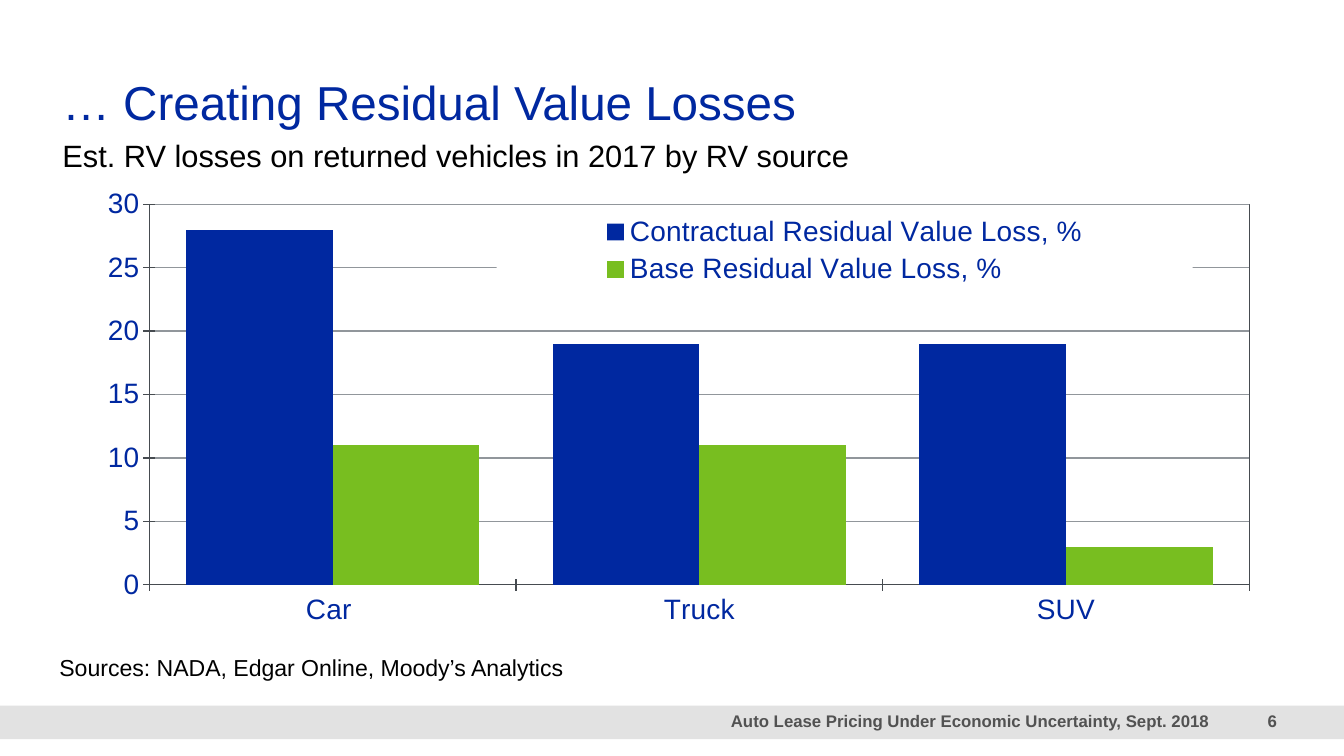
from lxml.etree import SubElement
from pptx import Presentation
from pptx.chart.data import CategoryChartData
from pptx.dml.color import RGBColor
from pptx.enum.chart import XL_CHART_TYPE, XL_LEGEND_POSITION, XL_TICK_LABEL_POSITION, XL_TICK_MARK
from pptx.enum.shapes import MSO_SHAPE
from pptx.enum.text import MSO_ANCHOR, PP_ALIGN
from pptx.oxml import parse_xml
from pptx.oxml.ns import nsdecls, qn
from pptx.util import Inches, Pt

COLORS = {
    "blue": "0028A0",
    "green": "78BE20",
    "axis": "464B50",
    "grid": "91969B",
    "band": "E2E2E2",
    "footer": "525252",
    "black": "000000",
    "white": "FFFFFF",
}
LOSSES = {
    "Contractual Residual Value Loss, %": ("blue", (28, 19, 19)),
    "Base Residual Value Loss, %": ("green", (11, 11, 3)),
}
BAND_TOP, BAND_HEIGHT = 93.33, 4.44


class SlideBuilder:
    font_name = "Arial"
    columns = rows = 100

    def __init__(self, deck):
        self.deck = deck
        self.page = deck.slides.add_slide(deck.slide_layouts[6])

    def area(self, left, top, width, height):
        column = self.deck.slide_width / self.columns
        row = self.deck.slide_height / self.rows
        return [round(n) for n in (left * column, top * row, width * column, height * row)]

    def color(self, name):
        return RGBColor.from_string(COLORS[name])

    def style(self, font, size, color, bold=False):
        font.name = self.font_name
        font.size = Pt(size)
        font.bold = bold
        font.color.rgb = self.color(color)

    def band(self, *area, color):
        shape = self.page.shapes.add_shape(MSO_SHAPE.RECTANGLE, *self.area(*area))
        shape.shadow.inherit = False
        shape.fill.solid()
        shape.fill.fore_color.rgb = self.color(color)
        shape.line.fill.background()

    def text(self, words, *area, size, color="black", bold=False,
             align=PP_ALIGN.LEFT, anchor=MSO_ANCHOR.TOP, spacing=1.0):
        frame = self.page.shapes.add_textbox(*self.area(*area)).text_frame
        frame.word_wrap = True
        frame.vertical_anchor = anchor
        frame.margin_left = frame.margin_right = frame.margin_top = frame.margin_bottom = 0
        frame.text = words
        para = frame.paragraphs[0]
        para.alignment = align
        para.line_spacing = spacing
        for span in para.runs:
            self.style(span.font, size, color, bold)

    def footer(self, words, left, width):
        self.text(words, left, BAND_TOP, width, BAND_HEIGHT, size=12, color="footer",
                  bold=True, align=PP_ALIGN.RIGHT, anchor=MSO_ANCHOR.MIDDLE, spacing=0.9)

    def line(self, line_format, color):
        line_format.width = Pt(1)
        line_format.color.rgb = self.color(color)

    def layout(self, parent, position, left, top, width, height, inner=False):
        for old in parent.findall(qn("c:layout")):
            parent.remove(old)
        layout = parse_xml(f"<c:layout {nsdecls('c')}/>")
        manual = SubElement(layout, qn("c:manualLayout"))
        settings = [("layoutTarget", "inner")] if inner else []
        settings += [("xMode", "edge"), ("yMode", "edge"),
                     ("x", left), ("y", top), ("w", width), ("h", height)]
        for tag, value in settings:
            SubElement(manual, qn(f"c:{tag}")).set("val", str(value))
        parent.insert(position, layout)

    def axis(self, axis):
        axis.major_tick_mark = XL_TICK_MARK.CROSS
        axis.minor_tick_mark = XL_TICK_MARK.NONE
        self.style(axis.tick_labels.font, 20, "blue")
        self.line(axis.format.line, "axis")

    def column_chart(self, categories, losses, *area):
        data = CategoryChartData()
        data.categories = categories
        for name, (_, values) in losses.items():
            data.add_series(name, values)
        chart = self.page.shapes.add_chart(
            XL_CHART_TYPE.COLUMN_CLUSTERED, *self.area(*area), data).chart
        chart.has_title = False
        self.style(chart.font, 19.2, "blue", True)

        plot = chart.plots[0]
        plot.vary_by_categories = False
        plot.gap_width = 50
        plot.overlap = 0
        for series, (color, _) in zip(plot.series, losses.values()):
            series.format.fill.solid()
            series.format.fill.fore_color.rgb = self.color(color)

        self.axis(chart.category_axis)
        self.axis(chart.value_axis)
        chart.category_axis.tick_label_position = XL_TICK_LABEL_POSITION.LOW
        chart.value_axis.minimum_scale = 0
        chart.value_axis.maximum_scale = 30
        chart.value_axis.major_unit = 5
        self.line(chart.value_axis.major_gridlines.format.line, "grid")

        plot_area = chart.element.find(".//" + qn("c:plotArea"))
        self.layout(plot_area, 0, 0.082, 0.088, 0.893, 0.775, inner=True)
        plot_area.append(parse_xml(
            f"<c:spPr {nsdecls('c', 'a')}><a:noFill/><a:ln w='12700'><a:solidFill>"
            f"<a:srgbClr val='{COLORS['axis']}'/></a:solidFill></a:ln></c:spPr>"))
        self.legend(chart)

    def legend(self, chart):
        chart.has_legend = True
        legend = chart.legend
        legend.position = XL_LEGEND_POSITION.RIGHT
        legend.include_in_layout = False
        self.style(legend.font, 20, "blue")
        element = chart.element.find(".//" + qn("c:legend"))
        self.layout(element, 1, 0.364, 0.1, 0.565, 0.165)
        element.find(qn("c:overlay")).addnext(parse_xml(
            f"<c:spPr {nsdecls('c', 'a')}><a:solidFill><a:srgbClr val='{COLORS['white']}'/>"
            "</a:solidFill><a:ln><a:noFill/></a:ln></c:spPr>"))


def main():
    deck = Presentation()
    deck.slide_width = Inches(13.33)
    deck.slide_height = Inches(7.5)
    slide = SlideBuilder(deck)
    slide.band(0, BAND_TOP, 100, BAND_HEIGHT, color="band")
    slide.footer("Auto Lease Pricing Under Economic Uncertainty, Sept. 2018", 40, 50)
    slide.footer("6", 90, 5)
    slide.column_chart(("Car ", "Truck", "SUV"), LOSSES, 3.6, 21.33, 91.65, 64.93)
    slide.text("… Creating Residual Value Losses", 4.65, 9.6, 67.5, 7.6, size=34, color="blue")
    slide.text("Est. RV losses on returned vehicles in 2017 by RV source",
               4.65, 18.13, 67.5, 6.93, size=22)
    slide.text("Sources: NADA, Edgar Online, Moody’s Analytics",
               4.42, 86.4, 68.1, 3.73, size=16.5, anchor=MSO_ANCHOR.BOTTOM)
    deck.save("out.pptx")


if __name__ == "__main__":
    main()
